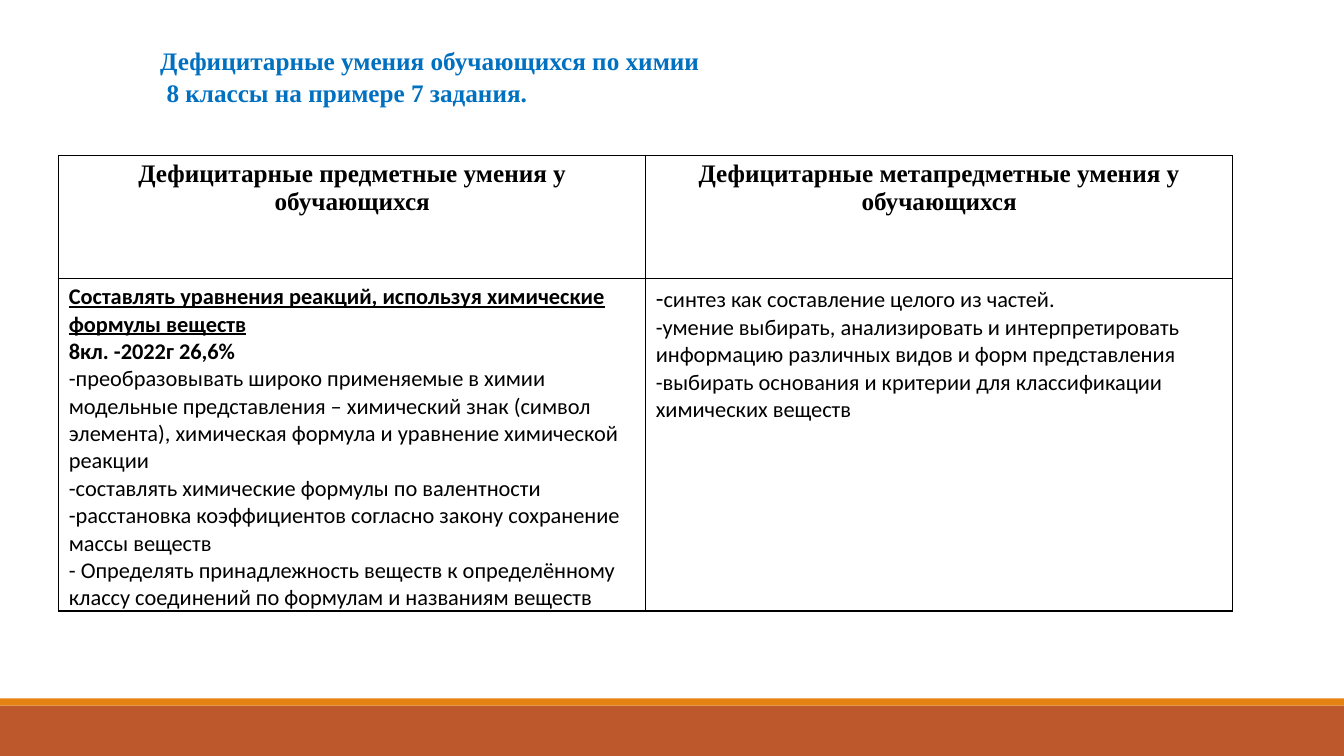
"""Build a slide with a two-column table of deficient chemistry skills."""
from dataclasses import dataclass

import lxml.etree
import pptx
import pptx.dml.color
import pptx.enum.shapes
import pptx.enum.text
import pptx.oxml.ns
import pptx.util

PX = 9525
BLACK = pptx.dml.color.RGBColor(0x00, 0x00, 0x00)
BLUE = pptx.dml.color.RGBColor(0x00, 0x70, 0xC0)
RUST = pptx.dml.color.RGBColor(0xBD, 0x58, 0x2C)
ORANGE = pptx.dml.color.RGBColor(0xE4, 0x83, 0x12)
SERIF, SANS = "Times New Roman", "Calibri"
LEFT, CENTER = pptx.enum.text.PP_ALIGN.LEFT, pptx.enum.text.PP_ALIGN.CENTER
COL_WIDTH = 559
ROW_HEIGHTS = (117, 317)


@dataclass(frozen=True)
class Bar:
    top: int
    height: int
    color: pptx.dml.color.RGBColor


@dataclass(frozen=True)
class Line:
    text: str
    bold: bool = False
    underline: bool = False
    lead: str = ""


BARS = (Bar(672, 48, RUST), Bar(665, 7, ORANGE))
TITLE = ("Дефицитарные умения обучающихся по химии", " 8 классы на примере 7 задания.")
HEADERS = (
    "Дефицитарные предметные умения у обучающихся",
    "Дефицитарные метапредметные умения у обучающихся",
)
SKILLS = (
    (
        Line("Составлять уравнения реакций, используя химические формулы веществ",
             bold=True, underline=True),
        Line("8кл. -2022г 26,6%", bold=True),
        Line("-преобразовывать широко применяемые в химии модельные представления – "
             "химический знак (символ элемента), химическая формула и уравнение "
             "химической реакции"),
        Line("-составлять химические формулы по валентности"),
        Line("-расстановка коэффициентов согласно закону сохранение массы веществ"),
        Line("- Определять принадлежность веществ к определённому классу соединений "
             "по формулам и названиям веществ"),
    ),
    (
        Line("синтез как составление целого из частей.", lead="-"),
        Line("-умение выбирать, анализировать и интерпретировать информацию "
             "различных видов и форм представления"),
        Line("-выбирать основания и критерии для классификации химических веществ"),
    ),
)


def px(n: int) -> pptx.util.Emu:
    return pptx.util.Emu(n * PX)


def add_text(p, text: str, *, size: int, font: str, color=BLACK, bold: bool = False,
             underline: bool = False, align=LEFT, spacing: float = 1.0) -> None:
    p.alignment = align
    p.line_spacing = spacing
    r = p.add_run()
    r.text = text
    r.font.size = pptx.util.Pt(size)
    r.font.name = font
    r.font.color.rgb = color
    r.font.bold = bold
    r.font.underline = underline


def next_paragraph(tf, index: int):
    return tf.add_paragraph() if index else tf.paragraphs[0]


def add_bar(s, bar: Bar) -> None:
    sp = s.shapes.add_shape(pptx.enum.shapes.MSO_SHAPE.RECTANGLE,
                            0, px(bar.top), px(1280), px(bar.height))
    sp.shadow.inherit = False
    sp.fill.solid()
    sp.fill.fore_color.rgb = bar.color
    sp.line.fill.background()


def format_title(sp) -> None:
    sp.left, sp.top, sp.width, sp.height = px(143), px(36), px(836), px(68)
    tf = sp.text_frame
    tf.word_wrap = True
    tf.auto_size = pptx.enum.text.MSO_AUTO_SIZE.SHAPE_TO_FIT_TEXT
    tf.vertical_anchor = pptx.enum.text.MSO_ANCHOR.TOP
    for i, text in enumerate(TITLE):
        add_text(next_paragraph(tf, i), text, size=18, font=SERIF, color=BLUE,
                 bold=True, spacing=1.07)


def format_cell(cell) -> None:
    cell.fill.background()
    cell.margin_left = cell.margin_right = pptx.util.Inches(0.1)
    cell.margin_top = pptx.util.Inches(0.05)
    cell.margin_bottom = 0
    cell.vertical_anchor = pptx.enum.text.MSO_ANCHOR.TOP
    qn = pptx.oxml.ns.qn
    tc_pr = cell._tc.get_or_add_tcPr()
    for i, side in enumerate(("a:lnL", "a:lnR", "a:lnT", "a:lnB")):
        ln = lxml.etree.Element(qn(side), w=str(pptx.util.Pt(1)))
        fill = lxml.etree.SubElement(ln, qn("a:solidFill"))
        lxml.etree.SubElement(fill, qn("a:srgbClr"), val=str(BLACK))
        tc_pr.insert(i, ln)


def add_skills_table(s) -> None:
    table = s.shapes.add_table(len(ROW_HEIGHTS), len(HEADERS), px(56), px(148),
                               px(COL_WIDTH * len(HEADERS)), px(sum(ROW_HEIGHTS))).table
    table.first_row = table.horz_banding = False
    for row, height in zip(table.rows, ROW_HEIGHTS):
        row.height = px(height)
    for cell in table.iter_cells():
        format_cell(cell)
    for col, (header, lines) in enumerate(zip(HEADERS, SKILLS)):
        add_text(table.cell(0, col).text_frame.paragraphs[0], header,
                 size=18, font=SERIF, bold=True, align=CENTER)
        tf = table.cell(1, col).text_frame
        for i, line in enumerate(lines):
            p = next_paragraph(tf, i)
            if line.lead:
                add_text(p, line.lead, size=18, font=SANS)
            add_text(p, line.text, size=16, font=SANS, bold=line.bold,
                     underline=line.underline)


def main() -> None:
    prs = pptx.Presentation()
    prs.slide_width, prs.slide_height = px(1280), px(720)
    s = prs.slides.add_slide(prs.slide_layouts.get_by_name("Title Only"))
    for bar in BARS:
        add_bar(s, bar)
    format_title(s.shapes.title)
    add_skills_table(s)
    prs.save("out.pptx")


if __name__ == "__main__":
    main()
